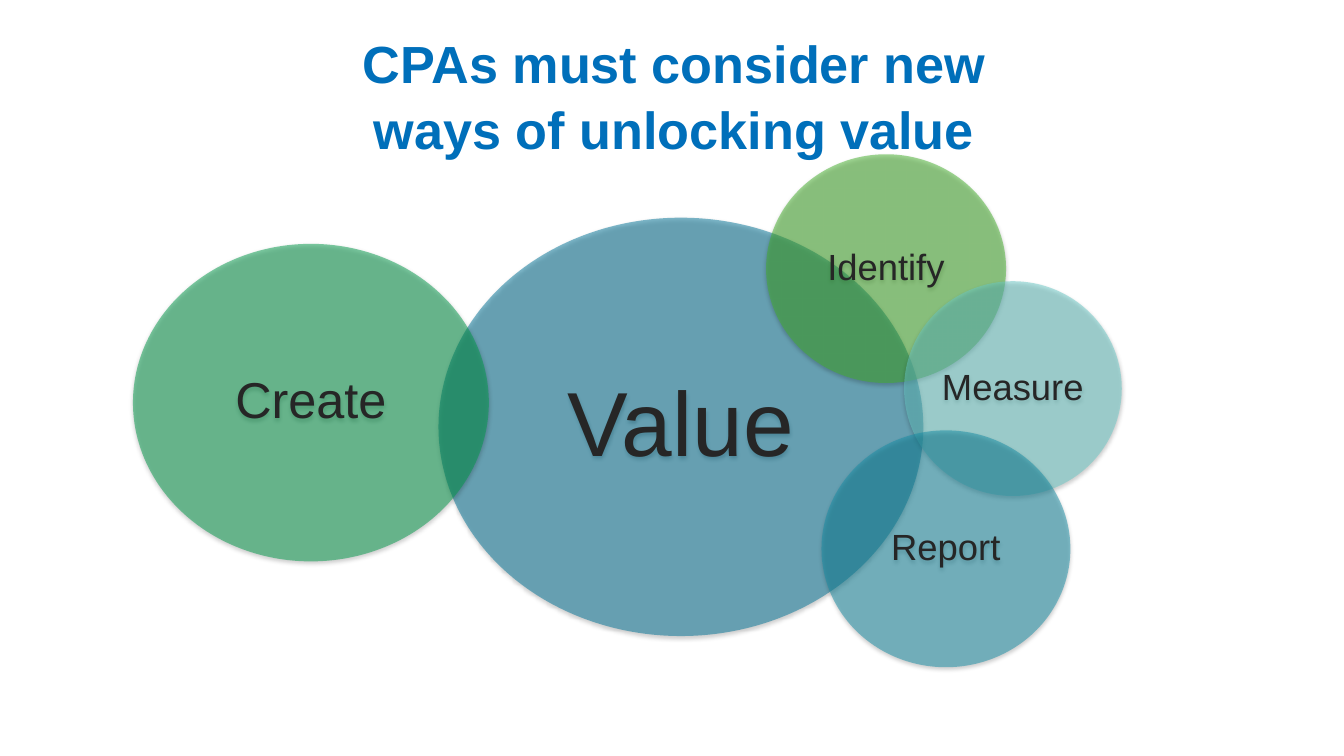
from lxml import etree
from pptx import Presentation
from pptx import util as u
from pptx.dml import color
from pptx.enum import shapes, text
from pptx.oxml import ns

COLORS = {
    "title": "006FBA",
    "label": "262626",
    "shadow": "000000",
    "value": "007397",
    "create": "009A49",
    "identify": "43B02A",
    "measure": "68C8C6",
    "report": "168EA6",
}

CIRCLES = [
    ("Value", "value", 313.2, 155.5, 346.3, 298.8, 65),
    ("Create", "create", 95, 174.2, 254.2, 226.8, 36),
    ("Identify", "identify", 547.2, 110.2, 171.4, 163.4, 26),
    ("Measure", "measure", 645.8, 200.9, 155.5, 153.4, 26),
    ("Report", "report", 586.8, 307.4, 177.8, 169.2, 26),
]


def rgb(name):
    return color.RGBColor.from_string(COLORS[name])


def add_child(parent, tag, **attributes):
    values = {key: str(value) for key, value in attributes.items()}
    return etree.SubElement(parent, ns.qn(tag), values)


class ValueSlide:
    font = "Arial"
    opacity = 50
    shadow_opacity = 38

    def __init__(self, deck):
        self.page = deck.slides.add_slide(deck.slide_layouts[6])

    def label(self, box, words, size, color_name, spacing, bold=False):
        frame = box.text_frame
        frame.word_wrap = True
        frame.vertical_anchor = text.MSO_ANCHOR.MIDDLE
        frame.margin_left = frame.margin_right = 0
        frame.margin_top = frame.margin_bottom = 0
        para = frame.paragraphs[0]
        para.text = words
        para.alignment = text.PP_ALIGN.CENTER
        para.line_spacing = spacing
        para.font.name = self.font
        para.font.size = u.Pt(size)
        para.font.bold = bold
        para.font.color.rgb = rgb(color_name)

    def title(self, words, left, top, width, height):
        box = self.page.shapes.add_textbox(
            u.Pt(left), u.Pt(top), u.Pt(width), u.Pt(height))
        self.label(box, words, 37.3, "title", 1.05, bold=True)

    def circle(self, words, color_name, left, top, width, height, size):
        oval = self.page.shapes.add_shape(
            shapes.MSO_SHAPE.OVAL,
            u.Pt(left), u.Pt(top), u.Pt(width), u.Pt(height))
        oval.fill.solid()
        oval.fill.fore_color.rgb = rgb(color_name)
        oval.line.fill.background()
        properties = oval.element.spPr
        fill_color = properties.find(ns.qn("a:solidFill"))[0]
        add_child(fill_color, "a:alpha", val=self.opacity * 1000)
        self.soft_shadow(oval)
        self.label(oval, words, size, "label", 0.9)

    def soft_shadow(self, oval):
        oval.shadow.inherit = False
        effects = oval.element.spPr.find(ns.qn("a:effectLst"))
        shadow = add_child(
            effects, "a:outerShdw", blurRad=u.Pt(3.1), dist=u.Pt(1.6),
            dir=90 * 60000, rotWithShape=0)
        tint = add_child(shadow, "a:srgbClr", val=COLORS["shadow"])
        add_child(tint, "a:alpha", val=self.shadow_opacity * 1000)


def main():
    deck = Presentation()
    deck.slide_width = u.Pt(960)
    deck.slide_height = u.Pt(540)
    slide = ValueSlide(deck)
    slide.title("CPAs must consider new ways of unlocking value",
                231.8, 45.4, 499.7, 43.9)
    for circle in CIRCLES:
        slide.circle(*circle)
    deck.save("out.pptx")


if __name__ == "__main__":
    main()
